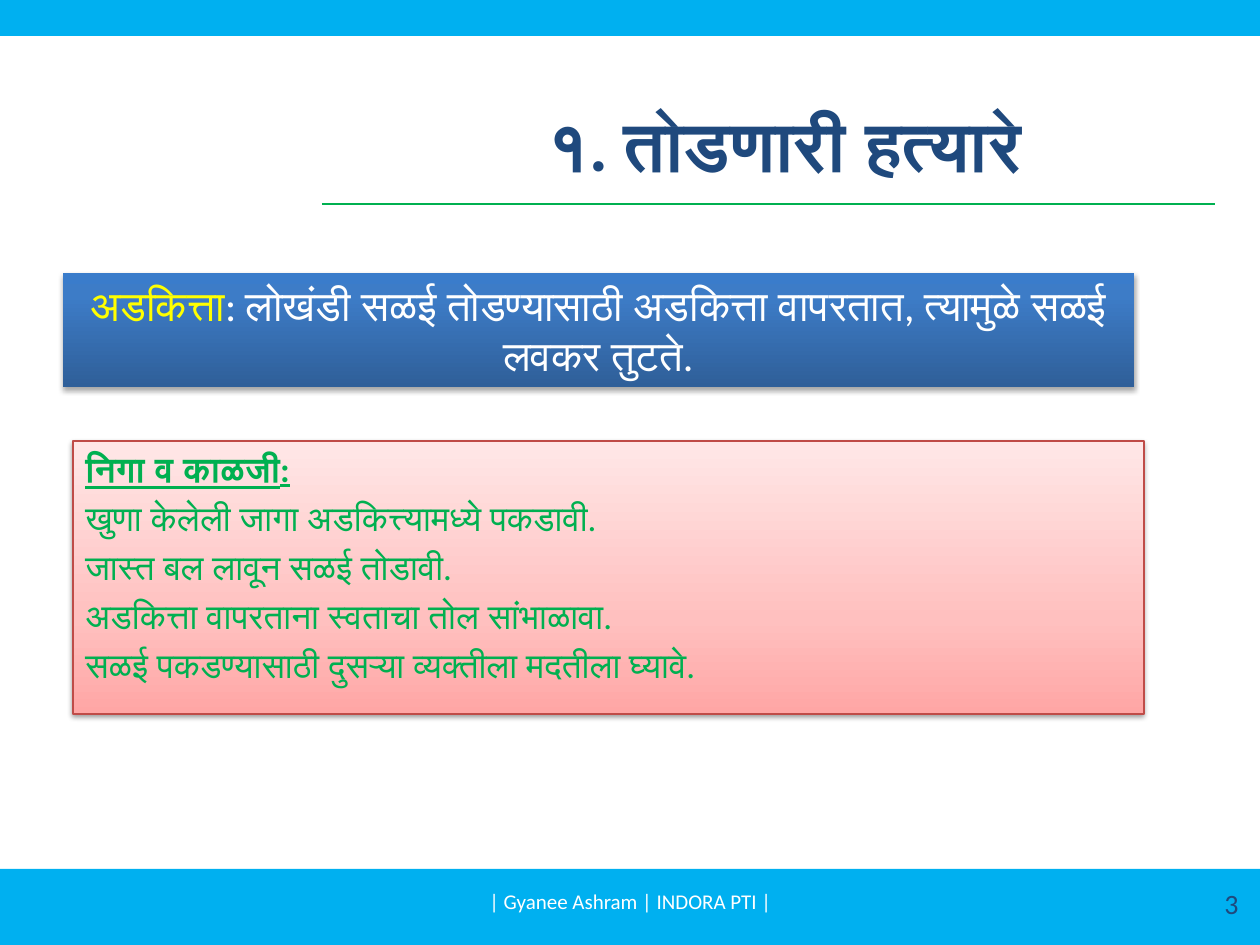
from lxml import etree
from pptx import Presentation, util as u
from pptx.dml.color import RGBColor
from pptx.enum import shapes, text
from pptx.oxml.ns import qn

PX = 914400 // 126
SKY = RGBColor(0x00, 0xB0, 0xF0)
GREEN = RGBColor(0x00, 0xB0, 0x50)
NAVY = RGBColor(0x1F, 0x49, 0x7D)
WHITE = RGBColor(0xFF, 0xFF, 0xFF)
YELLOW = RGBColor(0xFF, 0xFF, 0x00)
RED = RGBColor(0xBF, 0x4C, 0x48)
BLUE_STOPS = [(0, "2F5F99"), (80, "3D7CC7"), (100, "3A7CCB")]
PINK_STOPS = [(0, "FFA6A5"), (35, "FFC0BF"), (100, "FFE7E7")]

LEFT, CENTER, RIGHT = text.PP_ALIGN.LEFT, text.PP_ALIGN.CENTER, text.PP_ALIGN.RIGHT

# Content
BANDS = [(0, 869, 1260, 76), (0, 0, 1260, 36)]
LABELS = [  # text, box, size, colour, bold, alignment
    ("१. तोडणारी हत्यारे ", (294, 42, 1002, 203), 40, NAVY, True, CENTER),
    ("3", (958, 878, 293, 50), 16, NAVY, False, RIGHT),
    ("| Gyanee Ashram | INDORA PTI |", (431, 876, 399, 50), 12, WHITE, False, CENTER),
]
TOOL = "अडकित्ता"
TOOL_USE = ": लोखंडी सळई तोडण्यासाठी अडकित्ता वापरतात, त्यामुळे सळई लवकर तुटते."
CARE_HEADING = "निगा व काळजी:"
CARE_STEPS = [
    "खुणा केलेली जागा अडकित्त्यामध्ये पकडावी.",
    "जास्त बल लावून सळई तोडावी.",
    "अडकित्ता वापरताना स्वताचा तोल सांभाळावा.",
    "सळई पकडण्यासाठी दुसऱ्या व्यक्तीला मदतीला घ्यावे.",
]

prs = Presentation()
prs.slide_width, prs.slide_height = 1260 * PX, 945 * PX
slide = prs.slides.add_slide(prs.slide_layouts[6])


def px(*lengths):
    return [length * PX for length in lengths]


def style(paragraph, size, color=None, bold=False, align=LEFT):
    paragraph.alignment = align
    font = paragraph.font
    font.name, font.size, font.bold = "Calibri", u.Pt(size), bold
    if color is not None:
        font.color.rgb = color


def add_rect(box):
    rect = slide.shapes.add_shape(shapes.MSO_SHAPE.RECTANGLE, *px(*box))
    rect.shadow.inherit = False
    rect.line.fill.background()
    return rect


def add_panel(box, stops, shadow_alpha):
    """Rectangle with a vertical gradient and a soft shadow below."""
    panel = add_rect(box)
    panel.fill.gradient()
    panel.fill.gradient_angle = 90
    properties = panel._element.spPr
    stop_list = properties.find(".//" + qn("a:gsLst"))
    for old_stop in list(stop_list):
        stop_list.remove(old_stop)
    for position, color in stops:
        stop = etree.SubElement(stop_list, qn("a:gs"), pos=str(position * 1000))
        etree.SubElement(stop, qn("a:srgbClr"), val=color)
    shadow = etree.SubElement(
        properties.find(qn("a:effectLst")), qn("a:outerShdw"),
        blurRad=str(u.Pt(3.1)), dist=str(u.Pt(1.7)), dir="5400000", rotWithShape="0")
    shade = etree.SubElement(shadow, qn("a:srgbClr"), val="000000")
    etree.SubElement(shade, qn("a:alpha"), val=str(shadow_alpha * 1000))
    panel.text_frame.word_wrap = True
    panel.text_frame.vertical_anchor = text.MSO_ANCHOR.TOP
    return panel


# Top and bottom bands, rule under the title
for box in BANDS:
    band = add_rect(box)
    band.fill.solid()
    band.fill.fore_color.rgb = SKY

rule = slide.shapes.add_connector(shapes.MSO_CONNECTOR.STRAIGHT, *px(322, 204, 1215, 204))
rule.line.color.rgb = GREEN
rule.line.width = u.Pt(0.75)
etree.SubElement(rule._element.spPr, qn("a:effectLst"))

# Title, page number and footer
for words, box, size, color, bold, align in LABELS:
    frame = slide.shapes.add_textbox(*px(*box)).text_frame
    frame.word_wrap = True
    frame.vertical_anchor = text.MSO_ANCHOR.MIDDLE
    frame.text = words
    style(frame.paragraphs[0], size, color, bold, align)

# Care instructions
care = add_panel((73, 441, 1071, 273), PINK_STOPS, 38)
care.line.color.rgb = RED
care.line.width = u.Pt(0.75)
care.text_frame.text = CARE_HEADING
heading = care.text_frame.paragraphs[0]
style(heading, 20, GREEN, True)
heading.font.underline = True
for words in CARE_STEPS:
    step = care.text_frame.add_paragraph()
    step.text = words
    step.space_before = u.Pt(4)
    numbering = step._p.get_or_add_pPr()
    numbering.set("marL", str(u.Inches(0.56)))
    numbering.set("indent", str(u.Inches(-0.56)))
    etree.SubElement(numbering, qn("a:buAutoNum"), type="hindiNumPeriod")
    style(step, 20, GREEN)

# Tool description
tool = add_panel((63, 273, 1071, 114), BLUE_STOPS, 35)
description = tool.text_frame.paragraphs[0]
for words, color in [(TOOL, YELLOW), (TOOL_USE, WHITE)]:
    run = description.add_run()
    run.text = words
    run.font.color.rgb = color
style(description, 24, align=CENTER)

prs.save("out.pptx")
